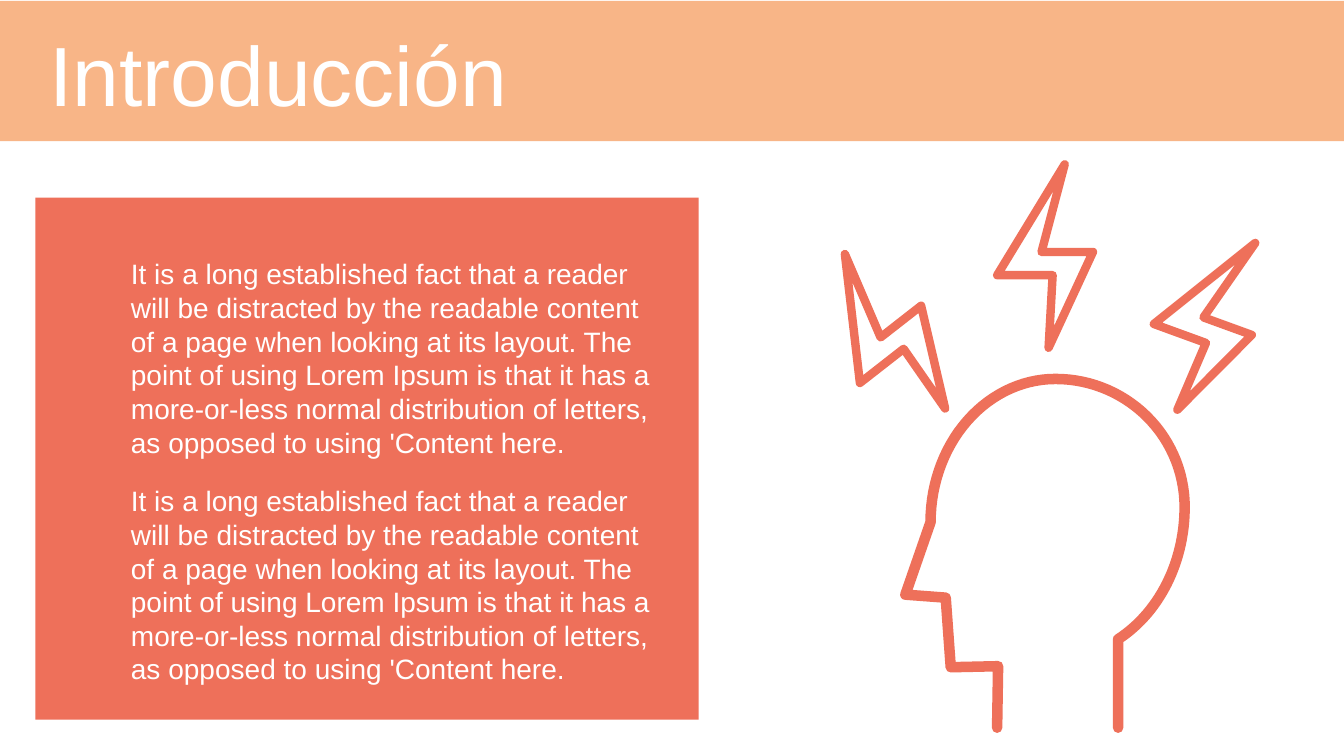
from math import cos, radians, sin

from lxml.etree import SubElement
from pptx import Presentation
from pptx.dml.color import RGBColor
from pptx.enum.shapes import MSO_SHAPE
from pptx.enum.text import MSO_ANCHOR, MSO_AUTO_SIZE, PP_ALIGN
from pptx.oxml.ns import qn
from pptx.util import Inches, Pt

PEACH, CORAL, WHITE = "F8B587", "EE705A", "FFFFFF"
FONT = "Arial"
ARC_STEPS = 30

PARAGRAPH = (
    "It is a long established fact that a reader will be distracted by the "
    "readable content of a page when looking at its layout. The point of using "
    "Lorem Ipsum is that it has a more-or-less normal distribution of letters, "
    "as opposed to using 'Content here."
)


def color(hex_value):
    """Turn a hex string into a colour."""
    return RGBColor.from_string(hex_value)


def add_block(slide, box, hex_value):
    """Add a flat rectangle without line or shadow."""
    block = slide.shapes.add_shape(MSO_SHAPE.RECTANGLE, *map(Inches, box))
    block.fill.solid()
    block.fill.fore_color.rgb = color(hex_value)
    block.line.fill.background()
    block.shadow.inherit = False
    return block


def write(paragraph, wording, size):
    """Add one white left-aligned run."""
    paragraph.alignment = PP_ALIGN.LEFT
    run = paragraph.add_run()
    run.text = wording
    run.font.name = FONT
    run.font.size = Pt(size)
    run.font.color.rgb = color(WHITE)


def add_heading(slide, box):
    """Draw the title band and set the title upon it."""
    left, top, width, height = box
    band = add_block(slide, box, PEACH)
    title = slide.shapes.title
    band._element.addnext(title._element)
    title.left, title.top = Inches(left + 0.39), Inches(top + 0.3)
    title.width, title.height = Inches(5.4), Inches(0.82)
    frame = title.text_frame
    frame.auto_size = MSO_AUTO_SIZE.NONE
    frame.vertical_anchor = MSO_ANCHOR.MIDDLE
    write(frame.paragraphs[0], "Introducción", 60)


def add_text_panel(slide, box):
    """Draw the coral panel with its two passages."""
    left, top, width, height = box
    add_block(slide, box, CORAL)
    for row in range(2):
        passage_box = (left + 0.85, top + 0.54 + row * 2.25, 5.52, 2.12)
        passage = slide.shapes.add_textbox(*map(Inches, passage_box))
        passage.text_frame.word_wrap = True
        write(passage.text_frame.paragraphs[0], PARAGRAPH, 20)


def add_stroke(group, corner, points, weight, close):
    """Draw a round-ended coral line through points measured from a corner."""
    left, top = corner
    start, *rest = [(Inches(left + x), Inches(top + y)) for x, y in points]
    builder = group.shapes.build_freeform(*start)
    builder.add_line_segments(rest, close=close)
    stroke = builder.convert_to_shape()
    stroke.fill.background()
    stroke.shadow.inherit = False
    stroke.line.color.rgb = color(CORAL)
    stroke.line.width = Pt(weight)
    outline = stroke.line._get_or_add_ln()
    outline.set("cap", "rnd")
    SubElement(outline, qn("a:round"))


def arc(center, radii, start, end):
    """List points along an elliptical arc, in degrees clockwise from the right."""
    angles = [radians(start + (end - start) * step / ARC_STEPS)
              for step in range(ARC_STEPS + 1)]
    return [(center[0] + radii[0] * cos(angle), center[1] + radii[1] * sin(angle))
            for angle in angles]


def turn(points, degrees):
    """Rotate points clockwise about their origin."""
    c, s = cos(radians(degrees)), sin(radians(degrees))
    return [(x * c - y * s, x * s + y * c) for x, y in points]


def add_head(group, corner):
    """Draw the head from nape over the skull to the throat."""
    nape = [(2.75, 5.63)]
    back = arc((2.13, 3.44), (1.28, 1.5), 61, 0)
    crown = arc((2.13, 3.44), (1.28, 1.27), 0, -90)
    forehead = arc((2.13, 3.59), (1.24, 1.42), -90, -180)
    nose, lip, chin = (0.64, 4.31), (1.04, 4.34), (1.09, 5.03)
    throat = [(1.56, 5.02), (1.55, 5.63)]
    profile = nape + back + crown + forehead + [nose, lip, chin] + throat
    add_stroke(group, corner, profile, 7.5, close=False)


def add_bolts(group, corner):
    """Draw one lightning bolt three times, each turned about its upper tip."""
    bolt = [(0, 0), (-0.23, 0.87), (0.28, 0.87),
            (-0.16, 1.82), (-0.12, 1.1), (-0.67, 1.1)]
    for tip_x, tip_y, degrees in [(0.04, 0.93, -38), (2.22, 0.04, 0), (4.11, 0.82, 20)]:
        tip = (corner[0] + tip_x, corner[1] + tip_y)
        add_stroke(group, tip, turn(bolt, degrees), 6, close=True)


def add_brainstorm_icon(slide, corner):
    """Group the head with its lightning bolts."""
    icon = slide.shapes.add_group_shape()
    add_head(icon, corner)
    add_bolts(icon, corner)


def main():
    """Build and save the slide."""
    deck = Presentation()
    deck.slide_width, deck.slide_height = Inches(13.33), Inches(7.5)
    slide = deck.slides.add_slide(deck.slide_layouts.get_by_name("Title Only"))
    add_heading(slide, (0, 0.01, 13.33, 1.39))
    add_text_panel(slide, (0.35, 1.96, 6.58, 5.18))
    add_brainstorm_icon(slide, (8.34, 1.59))
    deck.save("out.pptx")


if __name__ == "__main__":
    main()
